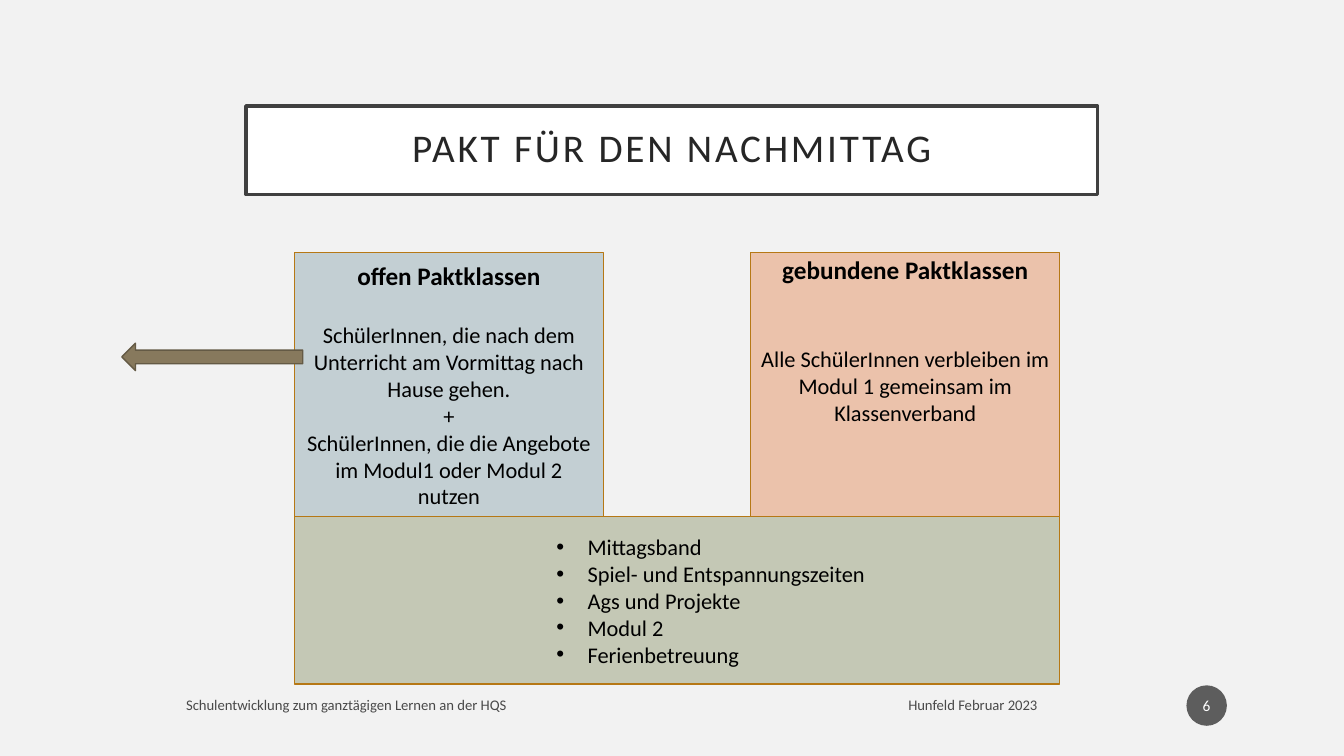
from lxml import etree
from pptx import Presentation
from pptx.dml.color import RGBColor
from pptx.enum.shapes import MSO_SHAPE
from pptx.enum.text import MSO_ANCHOR, PP_ALIGN
from pptx.oxml.ns import qn
from pptx.util import Cm, Pt

RECTANGLE, OVAL, LEFT_ARROW = MSO_SHAPE.RECTANGLE, MSO_SHAPE.OVAL, MSO_SHAPE.LEFT_ARROW
TOP, MIDDLE = MSO_ANCHOR.TOP, MSO_ANCHOR.MIDDLE
LEFT, CENTER = PP_ALIGN.LEFT, PP_ALIGN.CENTER
TITLE_ONLY = 5


def colour(value):
    return RGBColor.from_string(value)


class PactSlide:
    font = "Calibri"
    ink = "000000"
    border = "B67815"

    def __init__(self, deck, background):
        self.page = deck.slides.add_slide(deck.slide_layouts[TITLE_ONLY])
        self.page.background.fill.solid()
        self.page.background.fill.fore_color.rgb = colour(background)

    def paint(self, box, fill, line=None, width=1):
        box.fill.solid()
        box.fill.fore_color.rgb = colour(fill)
        if line:
            box.line.color.rgb = colour(line)
            box.line.width = Pt(width)
        else:
            box.line.fill.background()

    def set_text(self, box, text, size, ink=None, align=CENTER, anchor=MIDDLE):
        frame = box.text_frame
        frame.word_wrap = True
        frame.vertical_anchor = anchor
        frame.text = text
        for para in frame.paragraphs:
            para.alignment = align
            for span in para.runs:
                span.font.name = self.font
                span.font.size = Pt(size)
                span.font.color.rgb = colour(ink or self.ink)
        return frame

    def title(self, text, left, top, width, height):
        box = self.page.shapes.title
        box.left, box.top, box.width, box.height = map(Cm, (left, top, width, height))
        self.paint(box, "FFFFFF", "404040", 2.5)
        para = self.set_text(box, text, 28, "262626").paragraphs[0]
        para.line_spacing = 0.9
        para.runs[0]._r.get_or_add_rPr().set("spc", "200")

    def shape(self, kind, left, top, width, height, fill, line=None):
        box = self.page.shapes.add_shape(kind, Cm(left), Cm(top), Cm(width), Cm(height))
        box.shadow.inherit = False
        self.paint(box, fill, line)
        return box

    def class_box(self, heading, body, gap, left, top, width, height, fill, anchor):
        box = self.shape(RECTANGLE, left, top, width, height, fill, self.border)
        frame = self.set_text(box, "\n".join([heading, *body]), 16, anchor=anchor)
        frame.margin_top = Cm(0.05 if anchor == TOP else 0.13)
        first = frame.paragraphs[0]
        first.space_after = Pt(gap)
        first.runs[0].font.size = Pt(18)
        first.runs[0].font.bold = True

    def bullet_box(self, items, left, top, width, height, fill):
        box = self.shape(RECTANGLE, left, top, width, height, fill, self.border)
        for para in self.set_text(box, "\n".join(items), 16, align=LEFT).paragraphs:
            properties = para._p.get_or_add_pPr()
            properties.set("marL", str(Cm(7.14)))
            properties.set("indent", str(Cm(-0.79)))
            etree.SubElement(properties, qn("a:buFont")).set("typeface", "Arial")
            etree.SubElement(properties, qn("a:buChar")).set("char", "•")

    def footer(self, text, date, tab, left, top, width, height):
        box = self.page.shapes.add_textbox(Cm(left), Cm(top), Cm(width), Cm(height))
        frame = self.set_text(box, f"{text}\t{date}", 10.5, "494949", LEFT)
        tabs = etree.SubElement(frame.paragraphs[0]._p.get_or_add_pPr(), qn("a:tabLst"))
        stop = etree.SubElement(tabs, qn("a:tab"))
        stop.set("pos", str(Cm(tab)))
        stop.set("algn", "l")

    def page_number(self, number, left, top, size):
        box = self.shape(OVAL, left, top, size, size, "5D5D5D")
        frame = self.set_text(box, number, 11, "FFFFFF")
        frame.margin_left = frame.margin_right = Cm(0.05)


def main():
    deck = Presentation()
    deck.slide_width, deck.slide_height = Cm(33.87), Cm(19.05)
    slide = PactSlide(deck, "F2F2F2")
    slide.title("PAKT FÜR DEN NACHMITTAG", 6.2, 2.67, 21.46, 2.23)

    # The two kinds of classes
    left, top, width, height = 7.42, 6.37, 7.79, 6.65
    right = 18.92
    slide.class_box(
        "offen Paktklassen",
        ["SchülerInnen, die nach dem Unterricht am Vormittag nach Hause gehen.",
         "+",
         "SchülerInnen, die die Angebote im Modul1 oder Modul 2 nutzen"],
        22, left, top, width, height, "C3CFD3", MIDDLE)
    slide.class_box(
        "gebundene Paktklassen",
        ["Alle SchülerInnen verbleiben im Modul 1 gemeinsam im Klassenverband"],
        43, right, top, width, height, "EBC2AB", TOP)

    # Shared offers below both
    slide.bullet_box(
        ["Mittagsband", "Spiel- und Entspannungszeiten", "Ags und Projekte",
         "Modul 2", "Ferienbetreuung"],
        left, top + height, right + width - left, 4.22, "C4C8B5")

    # Footer and the way home
    slide.footer("Schulentwicklung zum ganztägigen Lernen an der HQS",
                 "Hunfeld Februar 2023", 18.2, 4.44, 17.32, 24.87, 0.89)
    slide.page_number("6", 29.9, 17.27, 1.02)
    slide.shape(LEFT_ARROW, 3.07, 8.65, 4.56, 0.69, "87795D", "645A45")

    deck.save("out.pptx")


if __name__ == "__main__":
    main()
